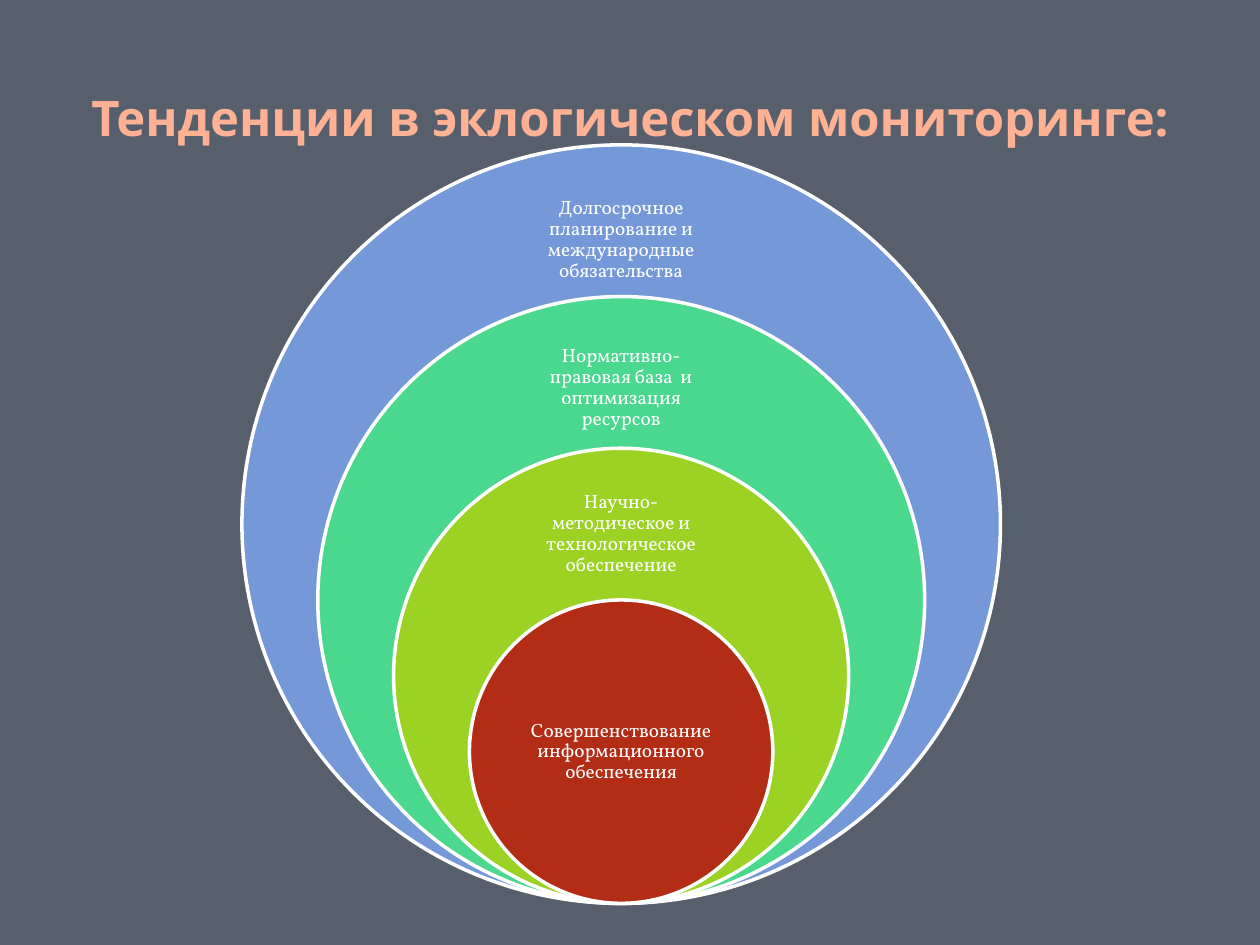
from pptx import Presentation
from pptx.dml.color import RGBColor
from pptx.enum.shapes import MSO_SHAPE
from pptx.enum.text import MSO_ANCHOR, MSO_AUTO_SIZE, PP_ALIGN
from pptx.util import Inches, Pt

CENTER = PP_ALIGN.CENTER
MIDDLE = MSO_ANCHOR.MIDDLE
NO_FIT = MSO_AUTO_SIZE.NONE
OVAL = MSO_SHAPE.OVAL
TITLE_ONLY = 5
WIDTH, HEIGHT = 10, 7.5
LABEL_WIDTH = 0.28
RINGS = [
    ("Долгосрочное планирование и международные обязательства", "7598D9", 0.05, 0.15),
    ("Нормативно-правовая база  и оптимизация ресурсов", "4AD78E", 0.06, 0.18),
    ("Научно-методическое и технологическое обеспечение", "9CD224", 0.075, 0.225),
    ("Совершенствование информационного обеспечения", "B32C16", 0.25, 0.5),
]


def color(value):
    """Turn a hex string into a colour."""
    return RGBColor.from_string(value)


def inches(box):
    """Turn a box in inches into slide lengths."""
    return [Inches(length) for length in box]


def write(frame, text, font, size, shade, bold=False):
    """Write one centred paragraph and return it."""
    frame.text = text
    frame.word_wrap = True
    frame.auto_size = NO_FIT
    frame.vertical_anchor = MIDDLE
    para = frame.paragraphs[0]
    para.alignment = CENTER
    span = para.runs[0].font
    span.name, span.size, span.bold = font, Pt(size), bold
    span.color.rgb = color(shade)
    return para


def place_title(page, box, text):
    """Move and format the title placeholder."""
    title = page.shapes.title
    title.left, title.top, title.width, title.height = inches(box)
    write(title.text_frame, text, "Open Sans", 28, "FFB194", True)


def add_circle(group, box, fill):
    """Draw a circle with a white outline."""
    circle = group.shapes.add_shape(OVAL, *inches(box))
    circle.shadow.inherit = False
    circle.fill.solid()
    circle.fill.fore_color.rgb = color(fill)
    circle.line.color.rgb = color("FFFFFF")
    circle.line.width = Pt(2)


def add_label(group, box, text):
    """Place a white label in the given box."""
    frame = group.shapes.add_textbox(*inches(box)).text_frame
    frame.margin_left = frame.margin_right = Inches(0.09)
    frame.margin_top = frame.margin_bottom = Inches(0.09)
    para = write(frame, text, "Vollkorn", 11, "FFFFFF")
    para.line_spacing = 0.9


def place_rings(page, box):
    """Nest circles that share the bottom point of a square box."""
    left, top, side, _ = box
    group = page.shapes.add_group_shape()
    for index, (text, fill, offset, depth) in enumerate(RINGS):
        step = index * side / (len(RINGS) + 1)
        diameter = side - step
        ring_top = top + step
        add_circle(group, (left + step / 2, ring_top, diameter, diameter), fill)
        width = side * LABEL_WIDTH
        label_left = left + (side - width) / 2
        label_top = ring_top + diameter * offset
        add_label(group, (label_left, label_top, width, diameter * depth), text)


def main():
    """Build and save the slide."""
    deck = Presentation()
    deck.slide_width, deck.slide_height = Inches(WIDTH), Inches(HEIGHT)
    page = deck.slides.add_slide(deck.slide_layouts[TITLE_ONLY])
    page.background.fill.solid()
    page.background.fill.fore_color.rgb = color("575F6D")
    title_box = (WIDTH * 0.05, HEIGHT * 0.04, WIDTH * 0.9, HEIGHT / 6)
    place_title(page, title_box, "Тенденции в эклогическом мониторинге:")
    place_rings(page, (1.92, 1.15, 6.02, 6.02))
    deck.save("out.pptx")


if __name__ == "__main__":
    main()
